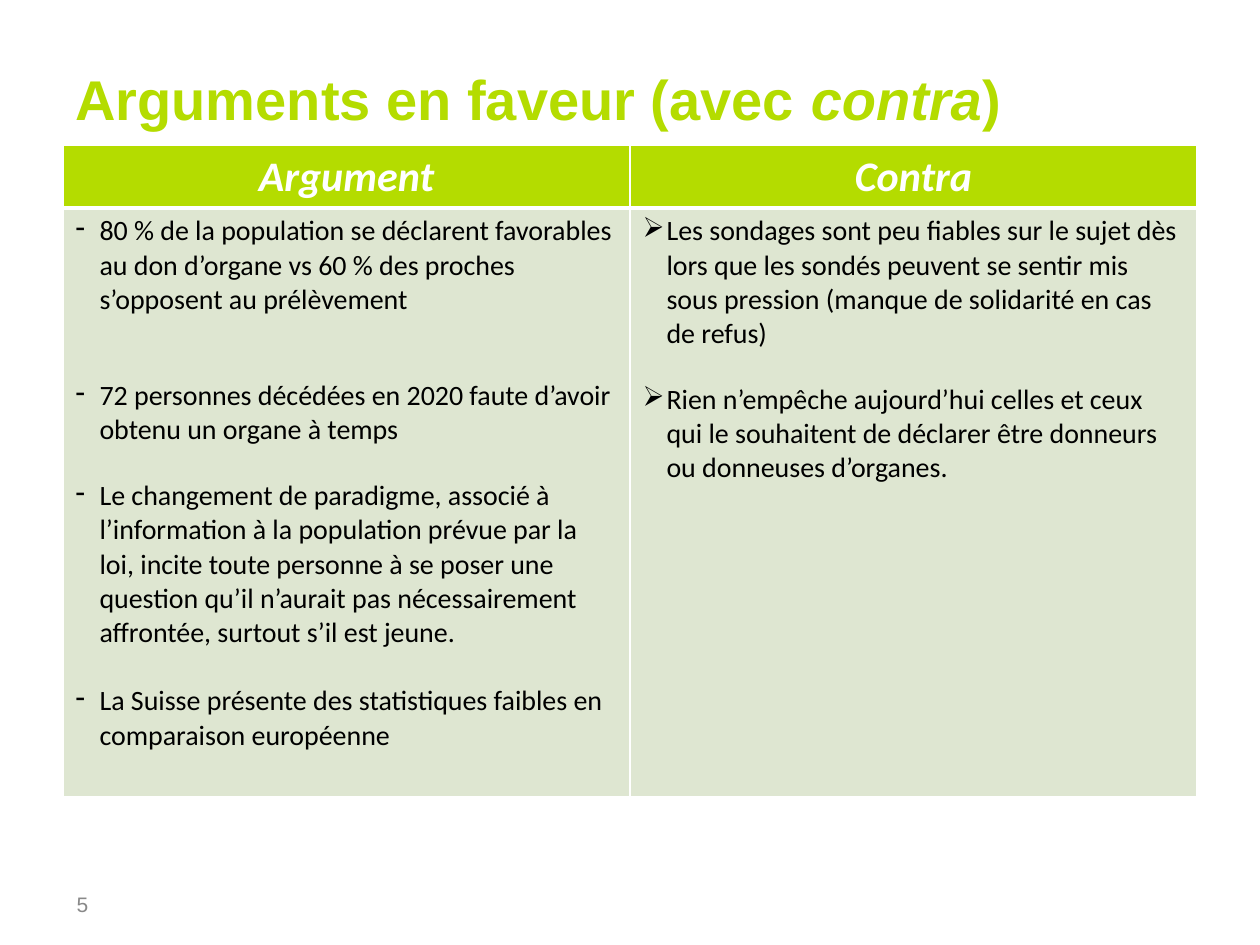
"""Build the slide weighing arguments for presumed consent against their rebuttals."""
from lxml import etree
from pptx import Presentation
from pptx import util as u
from pptx.dml.color import RGBColor
from pptx.enum import text
from pptx.oxml import ns

COLORS = {"lime": "B4DC00", "sage": "DEE6D1", "white": "FFFFFF", "black": "000000", "gray": "898989"}
TITLE = [("Arguments en faveur (avec ", False), ("contra", True), (")", False)]
COLUMNS = [
    ("Argument", "-", [
        ("80\u00a0% de la population se déclarent favorables au don d’organe vs 60\u00a0% des proches "
         "s’opposent au prélèvement", 0),
        ("72 personnes décédées en 2020 faute d’avoir obtenu un organe à temps", 35.5),
        ("Le changement de paradigme, associé à l’information à la population prévue par la loi, "
         "incite toute personne à se poser une question qu’il n’aurait pas nécessairement affrontée, "
         "surtout s’il est jeune.", 18),
        ("La Suisse présente des statistiques faibles en comparaison européenne", 19.5),
    ]),
    ("Contra", "➢", [
        ("Les sondages sont peu fiables sur le sujet dès lors que les sondés peuvent se sentir mis "
         "sous pression (manque de solidarité en cas de refus)", 0),
        ("Rien n’empêche aujourd’hui celles et ceux qui le souhaitent de déclarer être donneurs "
         "ou donneuses d’organes.", 18),
    ]),
]
ROW_HEIGHTS = [0.49, 4.67]
COLUMN_WIDTH = 4.5
THIN, THICK = 0.96, 3


def set_font(font, name, size, color, bold=False, italic=None):
    font.name, font.size, font.bold, font.italic = name, u.Pt(size), bold, italic
    font.color.rgb = RGBColor.from_string(COLORS[color])


def add_box(page, left, top, width, height):
    box = page.shapes.add_textbox(*map(u.Inches, (left, top, width, height)))
    box.text_frame.word_wrap = True
    box.text_frame.vertical_anchor = text.MSO_ANCHOR.MIDDLE
    return box.text_frame.paragraphs[0]


def add_color(parent, tag, color):
    holder = etree.SubElement(parent, ns.qn(tag))
    etree.SubElement(holder, ns.qn("a:srgbClr"), val=COLORS[color])


def style_cell(cell, fill, top, bottom):
    properties = cell._tc.get_or_add_tcPr()
    for side, width in (("L", THIN), ("R", THIN), ("T", top), ("B", bottom)):
        line = etree.SubElement(properties, ns.qn(f"a:ln{side}"), w=str(u.Pt(width)))
        add_color(line, "a:solidFill", "white")
    cell.fill.solid()
    cell.fill.fore_color.rgb = RGBColor.from_string(COLORS[fill])


def add_bullet(para, mark):
    properties = para._p.get_or_add_pPr()
    indent = u.Inches(0.19)
    properties.set("marL", str(indent))
    properties.set("indent", str(-indent))
    add_color(properties, "a:buClr", "black")
    etree.SubElement(properties, ns.qn("a:buChar"), char=mark)


def add_arguments_table(page):
    frame = page.shapes.add_table(2, len(COLUMNS), u.Inches(0.5), u.Inches(1.15),
                                  u.Inches(COLUMN_WIDTH * len(COLUMNS)), u.Inches(sum(ROW_HEIGHTS)))
    table = frame.table
    table.first_row = table.horz_banding = False
    for row, height in zip(table.rows, ROW_HEIGHTS):
        row.height = u.Inches(height)
    for index, (heading, mark, points) in enumerate(COLUMNS):
        table.columns[index].width = u.Inches(COLUMN_WIDTH)
        header, body = table.cell(0, index), table.cell(1, index)
        style_cell(header, "lime", THIN, THICK)
        style_cell(body, "sage", THICK, THIN)
        para = header.text_frame.paragraphs[0]
        para.text = heading
        para.alignment = text.PP_ALIGN.CENTER
        set_font(para.font, "Calibri", 24, "white", bold=True, italic=True)
        for number, (point, gap) in enumerate(points):
            para = body.text_frame.add_paragraph() if number else body.text_frame.paragraphs[0]
            para.text = point
            add_bullet(para, mark)
            para.space_before = u.Pt(gap)
            set_font(para.font, "Calibri", 16, "black")


def main():
    deck = Presentation()
    deck.slide_width, deck.slide_height = u.Inches(10), u.Inches(7.5)
    page = deck.slides.add_slide(deck.slide_layouts[6])

    title = add_box(page, 0.5, 0.2, 9.14, 1.25)
    title.line_spacing = u.Pt(32)
    for words, italic in TITLE:
        span = title.add_run()
        span.text = words
        set_font(span.font, "Arial", 32, "lime", bold=True, italic=italic)

    add_arguments_table(page)

    page_number = add_box(page, 0.51, 7.06, 4.72, 0.23)
    page_number.text = "5"
    set_font(page_number.font, "Arial", 12, "gray")
    deck.save("out.pptx")


if __name__ == "__main__":
    main()
